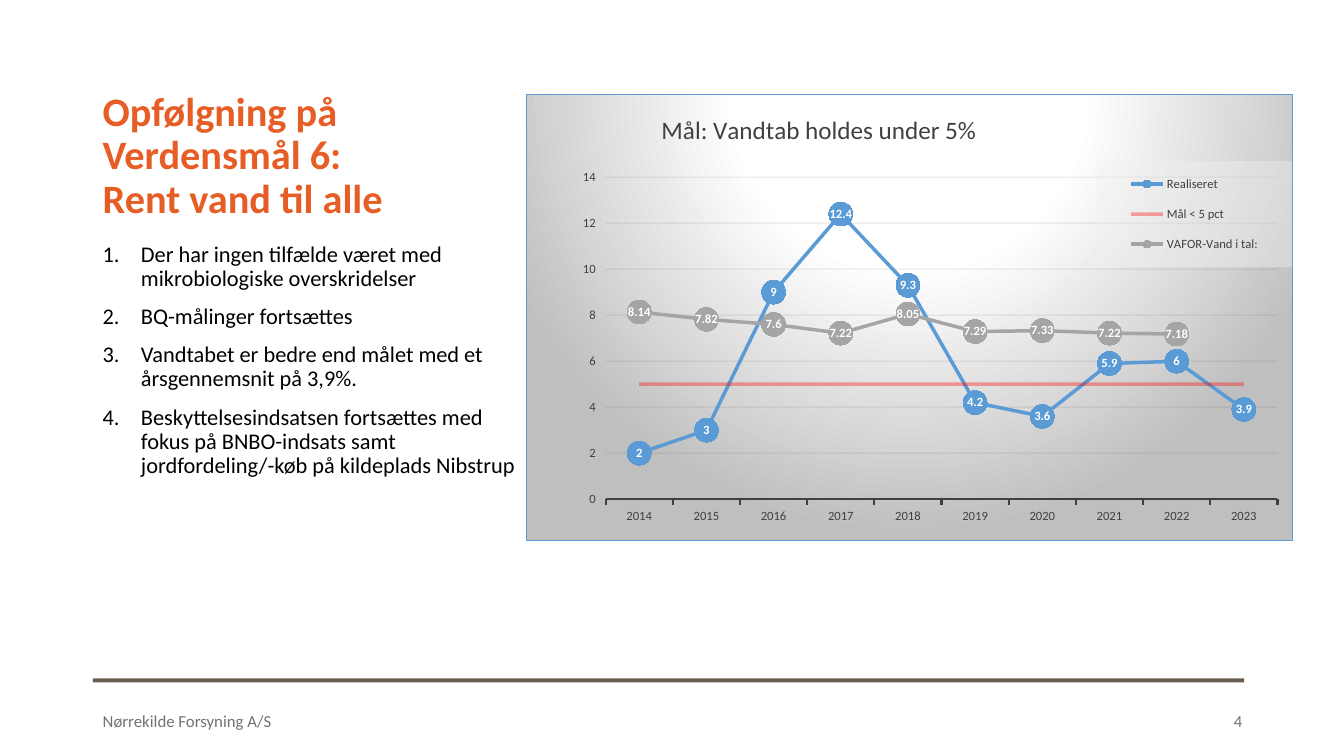
from lxml import etree
from pptx import Presentation
from pptx.chart.data import CategoryChartData
from pptx.dml.color import RGBColor
from pptx.enum.chart import XL_CHART_TYPE as ChartType, XL_LABEL_POSITION as LabelPos
from pptx.enum.chart import XL_LEGEND_POSITION as LegendPos, XL_MARKER_STYLE as Marker
from pptx.enum.chart import XL_TICK_MARK as Tick
from pptx.enum.shapes import MSO_SHAPE as Shape
from pptx.enum.text import MSO_ANCHOR as Anchor, PP_ALIGN as Align
from pptx.oxml import parse_xml
from pptx.oxml.ns import nsdecls, qn
from pptx.util import Inches, Pt

ORANGE, BLACK, GREY, DARK = "E65E25", "000000", "767171", "404040"
BLUE, RED, SILVER, WHITE = "5B9BD5", "FF0000", "A5A5A5", "FFFFFF"

MEASURES = [
    "Der har ingen tilfælde været med mikrobiologiske overskridelser",
    "BQ-målinger fortsættes",
    "Vandtabet er bedre end målet med et årsgennemsnit på 3,9%.",
    "Beskyttelsesindsatsen fortsættes med fokus på BNBO-indsats samt "
    "jordfordeling/-køb på kildeplads Nibstrup",
]
YEARS = [str(year) for year in range(2014, 2024)]
WATER_LOSS = [
    ("Realiseret", BLUE, [2, 3, 9, 12.4, 9.3, 4.2, 3.6, 5.9, 6, 3.9]),
    ("Mål < 5 pct", RED, [5] * len(YEARS)),
    ("VAFOR-Vand i tal:", SILVER,
     [8.14, 7.82, 7.6, 7.22, 8.05, 7.29, 7.33, 7.22, 7.18, None]),
]
GOAL = "Mål < 5 pct"

CHART_BACKGROUND = f"""<c:spPr {nsdecls('c', 'a')}>
<a:gradFill><a:gsLst>
<a:gs pos="0"><a:srgbClr val="FFFFFF"/></a:gs>
<a:gs pos="39000"><a:srgbClr val="FFFFFF"/></a:gs>
<a:gs pos="100000"><a:srgbClr val="BFBFBF"/></a:gs>
</a:gsLst><a:path path="circle">
<a:fillToRect l="50000" t="-80000" r="50000" b="180000"/></a:path></a:gradFill>
<a:ln w="9525"><a:solidFill><a:srgbClr val="{BLUE}"/></a:solidFill></a:ln></c:spPr>"""
LEGEND_BACKGROUND = f"""<c:spPr {nsdecls('c', 'a')}><a:solidFill>
<a:srgbClr val="F2F2F2"><a:alpha val="39000"/></a:srgbClr></a:solidFill></c:spPr>"""


def rgb(color):
    return RGBColor.from_string(color)


def set_opacity(element, percent):
    for color in element.iter(qn("a:srgbClr")):
        etree.SubElement(color, qn("a:alpha")).set("val", str(percent * 1000))


def place(part, index, inner=False, **fractions):
    """Give a chart part a manual layout in fractions of the chart."""
    for old in part.findall(qn("c:layout")):
        part.remove(old)
    layout = etree.Element(qn("c:layout"))
    manual = etree.SubElement(layout, qn("c:manualLayout"))
    if inner:
        etree.SubElement(manual, qn("c:layoutTarget")).set("val", "inner")
    for side in ("x", "y"):
        etree.SubElement(manual, qn(f"c:{side}Mode")).set("val", "edge")
    for name, value in fractions.items():
        etree.SubElement(manual, qn(f"c:{name}")).set("val", str(value))
    part.insert(index, layout)


class SlideBuilder:
    font_name = "Calibri"

    def __init__(self, slide):
        self.slide = slide

    def style(self, font, size, color, bold=False):
        font.name, font.size, font.bold = self.font_name, Pt(size), bold
        font.color.rgb = rgb(color)

    def bar(self, box, color):
        bar = self.slide.shapes.add_shape(Shape.RECTANGLE, *map(Inches, box))
        bar.shadow.inherit = False
        bar.fill.solid()
        bar.fill.fore_color.rgb = rgb(color)
        bar.line.fill.background()

    def text(self, box, paragraphs, size, color, bold=False, anchor=Anchor.TOP,
             align=Align.LEFT, spacing=1.0, numbered=False):
        frame = self.slide.shapes.add_textbox(*map(Inches, box)).text_frame
        frame.word_wrap = True
        frame.vertical_anchor = anchor
        for i, content in enumerate(paragraphs):
            paragraph = frame.add_paragraph() if i else frame.paragraphs[0]
            paragraph.text = content
            if numbered:
                self.number(paragraph, color)
            paragraph.alignment = align
            paragraph.line_spacing = spacing
            if i:
                paragraph.space_before = Pt(10)
            self.style(paragraph.font, size, color, bold)

    def number(self, paragraph, color):
        properties = paragraph._p.get_or_add_pPr()
        indent = Inches(0.38)
        properties.set("marL", str(indent))
        properties.set("indent", str(-indent))
        bullet_color = etree.SubElement(properties, qn("a:buClr"))
        etree.SubElement(bullet_color, qn("a:srgbClr")).set("val", color)
        etree.SubElement(properties, qn("a:buFont")).set("typeface", "+mj-lt")
        etree.SubElement(properties, qn("a:buAutoNum")).set("type", "arabicPeriod")

    def line_chart(self, box, title, categories, series_rows):
        data = CategoryChartData()
        data.categories = categories
        for name, _, values in series_rows:
            data.add_series(name, values)
        chart = self.slide.shapes.add_chart(
            ChartType.LINE_MARKERS, *map(Inches, box), data).chart
        self.style(chart.font, 10, BLACK)
        chart.plots[0].vary_by_categories = False

        heading = chart.chart_title.text_frame
        heading.text = title
        self.style(heading.paragraphs[0].font, 18, DARK)
        chart.has_legend = True
        chart.legend.position = LegendPos.RIGHT
        chart.legend.include_in_layout = False
        self.style(chart.legend.font, 9, DARK)

        self.axes(chart)
        for series, (_, color, _) in zip(chart.plots[0].series, series_rows):
            self.series(series, color)
        self.arrange(chart.element)

    def axes(self, chart):
        for axis in (chart.category_axis, chart.value_axis):
            axis.major_tick_mark = Tick.OUTSIDE
            axis.minor_tick_mark = Tick.NONE
            self.style(axis.tick_labels.font, 9, DARK)
        year_line = chart.category_axis.format.line
        year_line.color.rgb = rgb(DARK)
        year_line.width = Pt(1.5)
        percent = chart.value_axis
        percent.minimum_scale, percent.maximum_scale, percent.major_unit = 0, 14, 2
        percent.format.line.fill.background()
        percent.has_major_gridlines = True
        grid = percent.major_gridlines.format.line
        grid.color.rgb = rgb("0D0D0D")
        grid.width = Pt(0.75)
        set_opacity(chart.element.find(".//" + qn("c:majorGridlines")), 10)

    def series(self, series, color):
        series.smooth = False
        series.format.line.color.rgb = rgb(color)
        series.format.line.width = Pt(2.5)
        if series.name == GOAL:
            series.marker.style = Marker.NONE
            set_opacity(series._element, 35)
            return
        series.marker.style = Marker.CIRCLE
        series.marker.size = 17
        series.marker.format.fill.solid()
        series.marker.format.fill.fore_color.rgb = rgb(color)
        series.marker.format.line.fill.background()
        labels = series.data_labels
        labels.show_value = True
        labels.position = LabelPos.CENTER
        self.style(labels.font, 9, WHITE, bold=True)

    def arrange(self, space):
        """Place title, plot and legend, and fill the backgrounds."""
        legend = space.find(".//" + qn("c:legend"))
        place(space.find(".//" + qn("c:title")), 1, x=0.17, y=0.03)
        place(space.find(".//" + qn("c:plotArea")), 0, inner=True,
              x=0.103, y=0.186, w=0.878, h=0.721)
        place(legend, 1, x=0.745, y=0.15, w=0.255, h=0.237)
        legend.find(qn("c:overlay")).addnext(parse_xml(LEGEND_BACKGROUND))
        space.find(qn("c:chart")).addnext(parse_xml(CHART_BACKGROUND))


def main():
    deck = Presentation()
    deck.slide_width, deck.slide_height = Inches(13.33), Inches(7.5)
    page = SlideBuilder(deck.slides.add_slide(deck.slide_layouts[6]))
    page.bar((0.92, 6.73, 11.42, 0.04), "685E50")
    page.text((0.92, 1.29, 4.3, 0.96), ["Opfølgning på Verdensmål 6:\vRent vand til alle"],
              28.8, ORANGE, bold=True, anchor=Anchor.BOTTOM, spacing=0.9)
    page.text((0.92, 2.36, 4.3, 4.21), MEASURES, 16, BLACK, spacing=0.9, numbered=True)
    page.text((0.92, 6.96, 5.72, 0.39), ["Nørrekilde Forsyning A/S"], 12, GREY,
              anchor=Anchor.MIDDLE)
    page.text((11.91, 6.95, 0.51, 0.4), ["4"], 12, GREY, anchor=Anchor.MIDDLE,
              align=Align.RIGHT)
    page.line_chart((5.22, 0.93, 7.6, 4.44), "Mål: Vandtab holdes under 5%",
                    YEARS, WATER_LOSS)
    deck.save("out.pptx")


if __name__ == "__main__":
    main()
